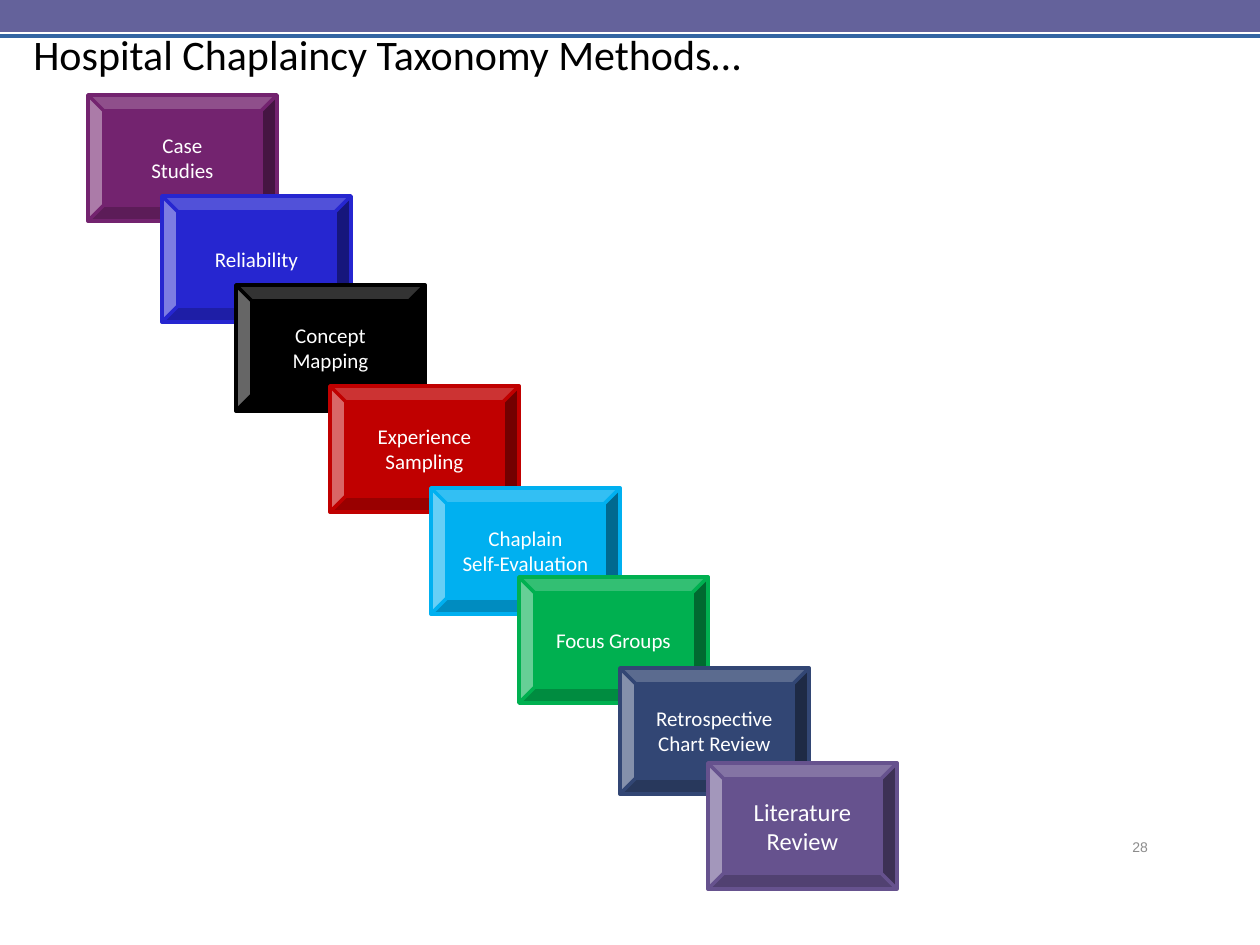
from typing import NamedTuple

import pptx
import pptx.dml.color
import pptx.enum.shapes
import pptx.enum.text
import pptx.oxml.ns
import pptx.util
from lxml import etree

RGBColor = pptx.dml.color.RGBColor
ANCHOR = pptx.enum.text.MSO_ANCHOR
SHAPE = pptx.enum.shapes.MSO_SHAPE

PX_PER_INCH = 126
SLIDE_W, SLIDE_H = 1260, 945
BOX_W, BOX_H = 189, 126

WHITE = RGBColor(0xFF, 0xFF, 0xFF)
BLACK = RGBColor(0x00, 0x00, 0x00)
GREY = RGBColor(0x8C, 0x8C, 0x8C)
BAND = RGBColor(0x64, 0x62, 0x9B)
RULE = RGBColor(0x33, 0x65, 0xA2)
PLUM = RGBColor(0x73, 0x23, 0x6F)
BLUE = RGBColor(0x26, 0x26, 0xD0)
RED = RGBColor(0xC0, 0x00, 0x00)
SKY = RGBColor(0x00, 0xB0, 0xF0)
GREEN = RGBColor(0x00, 0xB0, 0x50)
NAVY = RGBColor(0x32, 0x46, 0x74)
VIOLET = RGBColor(0x66, 0x52, 0x8E)


class Method(NamedTuple):
    text: str
    x: int
    y: int
    color: RGBColor
    size: int = 12


METHODS = [
    Method("Case\nStudies", 88, 95, PLUM),
    Method("Reliability", 162, 196, BLUE),
    Method("Concept Mapping", 236, 285, BLACK),
    Method("Experience Sampling", 330, 386, RED),
    Method("Chaplain\nSelf-Evaluation", 431, 488, SKY),
    Method("Focus Groups", 519, 577, GREEN),
    Method("Retrospective\nChart Review", 620, 668, NAVY),
    Method("Literature\nReview", 708, 763, VIOLET, 14),
]


def px(n: int) -> int:
    return round(n * pptx.util.Inches(1) / PX_PER_INCH)


def style_text(tf, text: str, font: str, size: int, color: RGBColor, align=None) -> None:
    tf.word_wrap = True
    tf.text = text
    for p in tf.paragraphs:
        p.alignment = align
        for r in p.runs:
            r.font.name = font
            r.font.size = pptx.util.Pt(size)
            r.font.color.rgb = color


def add_header(s) -> None:
    band = s.shapes.add_shape(SHAPE.RECTANGLE, 0, 0, px(SLIDE_W), px(32))
    band.shadow.inherit = False
    band.fill.solid()
    band.fill.fore_color.rgb = BAND
    band.line.fill.background()

    rule = s.shapes.add_connector(
        pptx.enum.shapes.MSO_CONNECTOR.STRAIGHT, 0, px(36), px(SLIDE_W), px(36))
    rule.line.color.rgb = RULE
    rule.line.width = pptx.util.Pt(2.25)
    etree.SubElement(rule._element.spPr, pptx.oxml.ns.qn("a:effectLst"))


def add_method(s, m: Method) -> None:
    box = s.shapes.add_shape(SHAPE.BEVEL, px(m.x), px(m.y), px(BOX_W), px(BOX_H))
    box.shadow.inherit = False
    box.fill.solid()
    box.fill.fore_color.rgb = m.color
    box.line.color.rgb = m.color
    box.line.width = pptx.util.Pt(2)
    box.text_frame.vertical_anchor = ANCHOR.MIDDLE
    style_text(box.text_frame, m.text, "Calibri", m.size, WHITE,
               pptx.enum.text.PP_ALIGN.CENTER)


def main() -> None:
    prs = pptx.Presentation()
    prs.slide_width, prs.slide_height = px(SLIDE_W), px(SLIDE_H)
    s = prs.slides.add_slide(prs.slide_layouts[6])

    add_header(s)
    for m in METHODS:
        add_method(s, m)

    number = s.shapes.add_textbox(px(1120), px(790), px(84), px(72))
    number.text_frame.vertical_anchor = ANCHOR.BOTTOM
    style_text(number.text_frame, "28", "Arial", 8, GREY)

    title = s.shapes.add_textbox(px(21), px(22), px(1008), px(63))
    style_text(title.text_frame, "Hospital Chaplaincy Taxonomy Methods…",
               "Calibri", 24, BLACK)

    prs.save("out.pptx")


if __name__ == "__main__":
    main()
